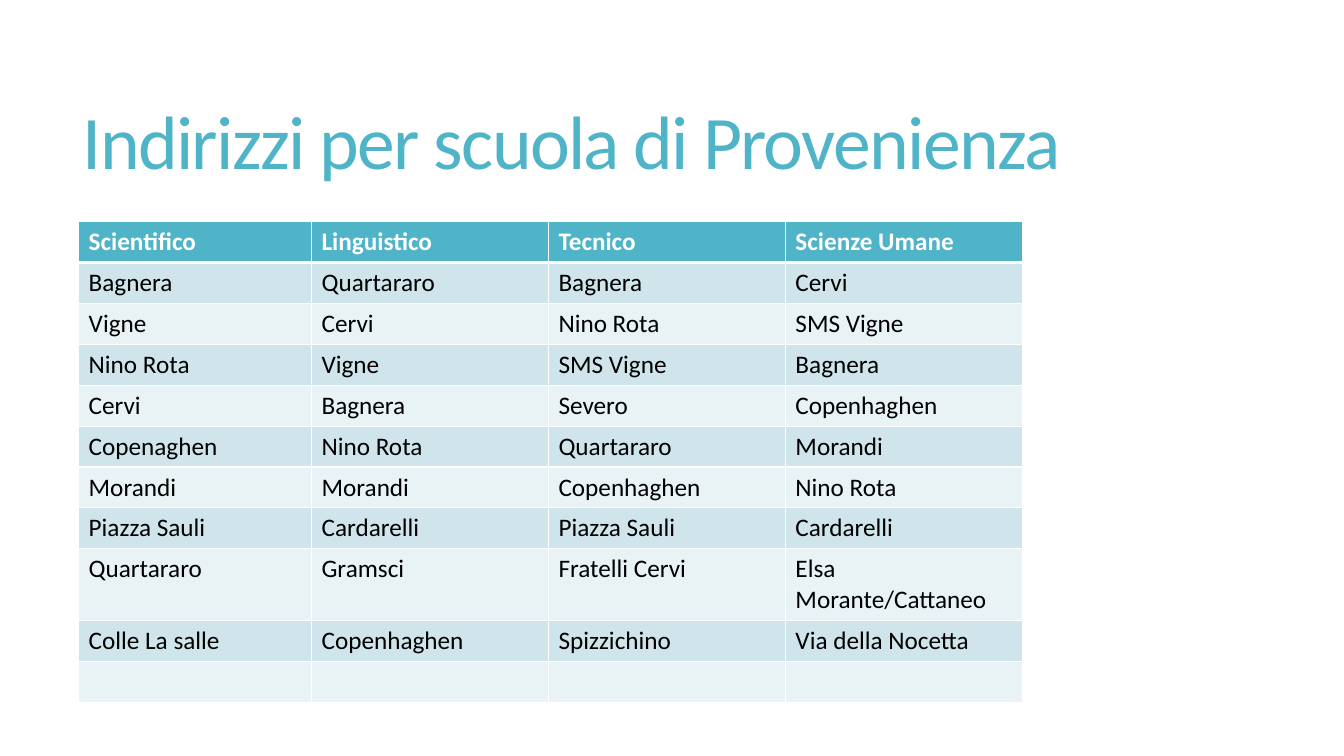
from dataclasses import dataclass

from lxml.etree import SubElement
from pptx import Presentation
from pptx.dml.color import RGBColor
from pptx.enum.text import MSO_ANCHOR as Anchor
from pptx.oxml.ns import qn
from pptx.util import Inches, Pt

FONT = "Calibri"
TEAL, WHITE, BLACK = "50B4C8", "FFFFFF", "000000"
BANDS = ("D0E5EB", "E9F2F5")
ROW_COUNT = 11


@dataclass(frozen=True)
class Course:
    name: str
    width: float
    schools: tuple[str, ...]


COURSES = (
    Course("Scientifico", 2.31, (
        "Bagnera", "Vigne", "Nino Rota", "Cervi", "Copenaghen", "Morandi",
        "Piazza Sauli", "Quartararo", "Colle La salle")),
    Course("Linguistico", 2.35, (
        "Quartararo", "Cervi", "Vigne", "Bagnera", "Nino Rota", "Morandi",
        "Cardarelli", "Gramsci", "Copenhaghen")),
    Course("Tecnico", 2.35, (
        "Bagnera", "Nino Rota", "SMS Vigne", "Severo", "Quartararo",
        "Copenhaghen", "Piazza Sauli", "Fratelli Cervi", "Spizzichino")),
    Course("Scienze Umane", 2.35, (
        "Cervi", "SMS Vigne", "Bagnera", "Copenhaghen", "Morandi", "Nino Rota",
        "Cardarelli", "Elsa Morante/Cattaneo", "Via della Nocetta")),
)


def colour(value: str) -> RGBColor:
    return RGBColor.from_string(value)


def write(frame, text: str, *, size: float, ink: str, bold: bool = False,
          line_spacing: float = 1.0, tracking: float = 0) -> None:
    para = frame.paragraphs[0]
    para.line_spacing = line_spacing
    span = para.add_run()
    span.text = text
    span.font.name = FONT
    span.font.size = Pt(size)
    span.font.bold = bold
    span.font.color.rgb = colour(ink)
    if tracking:
        span.font._element.set("spc", str(round(tracking * 100)))


def add_borders(cell, *, top: float, bottom: float) -> None:
    properties = cell._tc.get_or_add_tcPr()
    for side, width in (("L", 1), ("R", 1), ("T", top), ("B", bottom)):
        line = SubElement(properties, qn(f"a:ln{side}"), w=str(Pt(width)))
        fill = SubElement(line, qn("a:solidFill"))
        SubElement(fill, qn("a:srgbClr"), val=WHITE)


def add_title(page, text: str) -> None:
    title = page.shapes.title
    title.left, title.top = Inches(0.72), Inches(0.55)
    title.width, title.height = Inches(11.78), Inches(1.81)
    title.text_frame.vertical_anchor = Anchor.MIDDLE
    write(title.text_frame, text, size=54, ink=TEAL,
          line_spacing=0.85, tracking=-1.2)
    title.text_frame.paragraphs[0].alignment = 1  # left


def add_course_table(page, courses: tuple[Course, ...]) -> None:
    width = sum(course.width for course in courses)
    table = page.shapes.add_table(
        ROW_COUNT, len(courses), Inches(0.78), Inches(2.2),
        Inches(width), Inches(4.46)).table
    for column, course in enumerate(courses):
        table.columns[column].width = Inches(course.width)
        for row, text in enumerate((course.name, *course.schools, "")):
            cell = table.cell(row, column)
            header = row == 0
            add_borders(cell, top=3 if row == 1 else 1,
                        bottom=3 if header else 1)
            cell.fill.solid()
            cell.fill.fore_color.rgb = colour(
                TEAL if header else BANDS[(row - 1) % 2])
            if text:
                write(cell.text_frame, text, size=18, bold=header,
                      ink=WHITE if header else BLACK)


def main() -> None:
    deck = Presentation()
    deck.slide_width, deck.slide_height = Inches(13.33), Inches(7.5)
    page = deck.slides.add_slide(deck.slide_layouts[5])  # title only
    add_title(page, "Indirizzi per scuola di Provenienza")
    add_course_table(page, COURSES)
    deck.save("out.pptx")


if __name__ == "__main__":
    main()
